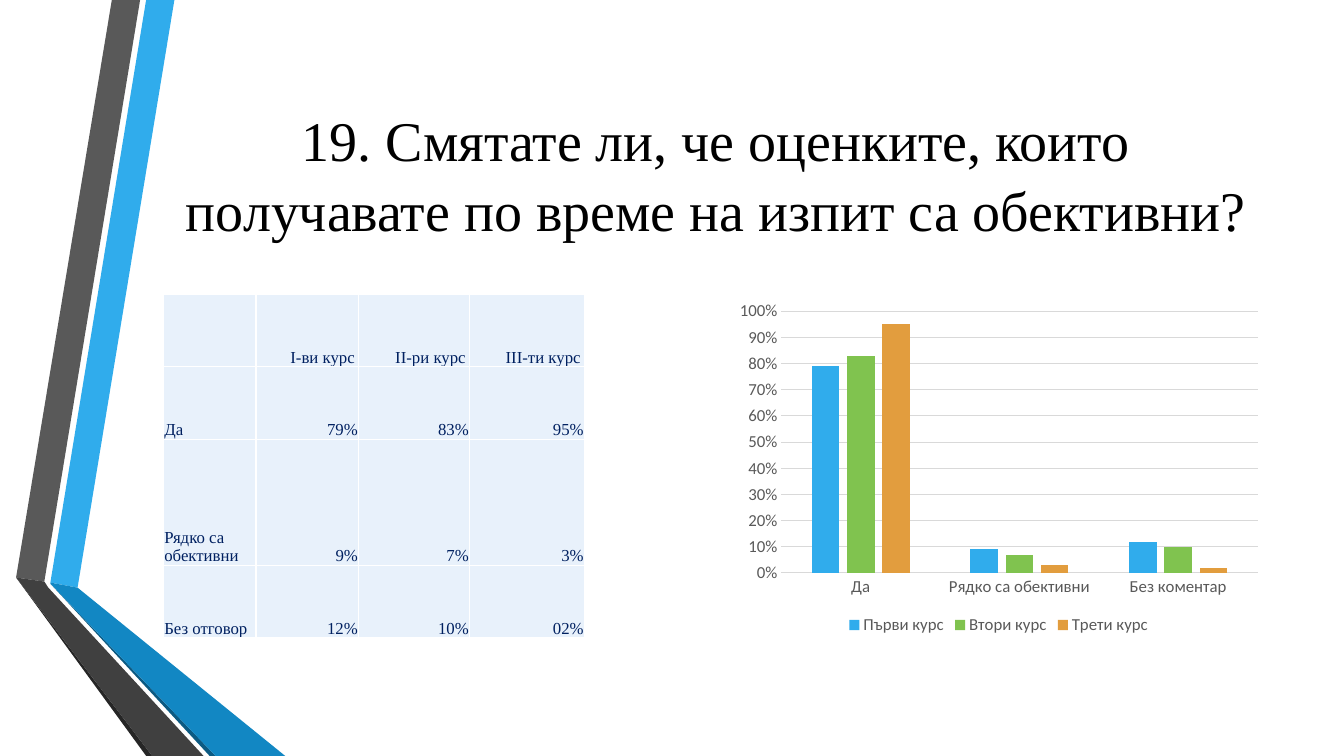
from lxml.etree import SubElement
from pptx import Presentation
from pptx.chart.data import CategoryChartData
from pptx.dml.color import RGBColor
from pptx.enum.chart import XL_CHART_TYPE as ChartType
from pptx.enum.chart import XL_LEGEND_POSITION as LegendPosition
from pptx.enum.chart import XL_TICK_MARK as TickMark
from pptx.enum.text import MSO_ANCHOR as Anchor
from pptx.enum.text import PP_ALIGN as Align
from pptx.oxml.ns import qn
from pptx.util import Inches, Pt

RIBBONS = [
    ("30ACEC", [(0.5, 5.78), (0.77, 5.83), (1.73, 0), (1.45, 0)]),
    ("595959", [(1.39, 0), (1.11, 0), (0.16, 5.73), (0.44, 5.77)]),
    ("262626", [(0.16, 5.73), (1.45, 7.5), (1.51, 7.5)]),
    ("0C5A82", [(0.5, 5.79), (2.08, 7.5), (2.14, 7.5)]),
    ("1287C3", [(0.5, 5.79), (2.14, 7.5), (2.83, 7.5), (0.77, 5.83), (0.5, 5.78)]),
    ("404040", [(2.02, 7.5), (0.48, 5.83), (0.44, 5.77), (0.16, 5.73), (1.51, 7.5)]),
]
TITLE = "19. Смятате ли, че оценките, които получавате по време на изпит са обективни?"
ANSWERS = [
    ["", "I-ви курс", "II-ри курс", "III-ти курс"],
    ["Да", "79%", "83%", "95%"],
    ["Рядко са обективни", "9%", "7%", "3%"],
    ["Без отговор", "12%", "10%", "02%"],
]
CATEGORIES = ["Да", "Рядко са обективни", "Без коментар"]
SERIES = [
    ("Първи курс", [0.79, 0.09, 0.12], "30ACEC"),
    ("Втори курс", [0.83, 0.07, 0.1], "80C34F"),
    ("Трети курс", [0.95, 0.03, 0.02], "E29D3E"),
]


def color(value):
    return RGBColor.from_string(value)


class SurveySlide:
    """Holds the style and the current slide, and draws each kind of element."""

    serif = "Times New Roman"
    sans = "Calibri"
    black = "000000"
    navy = "002060"
    gray = "595959"
    grid = "D9D9D9"
    cell_fill = "E8F1FB"
    border = "FFFFFF"

    def __init__(self, presentation):
        self.slide = presentation.slides.add_slide(presentation.slide_layouts[5])

    def style_font(self, font, name, size, value):
        font.name = name
        font.size = Pt(size)
        font.color.rgb = color(value)

    def add_run(self, paragraph, text, size, value):
        run = paragraph.add_run()
        run.text = text
        self.style_font(run.font, self.serif, size, value)

    def ribbon(self, value, points):
        start, *others = [(Inches(x), Inches(y)) for x, y in points]
        builder = self.slide.shapes.build_freeform(*start)
        builder.add_line_segments(others, close=True)
        shape = builder.convert_to_shape()
        shape.shadow.inherit = False
        shape.fill.solid()
        shape.fill.fore_color.rgb = color(value)
        shape.line.fill.background()

    def title(self, text, left, top, width, height):
        shape = self.slide.shapes.title
        shape.left, shape.top = Inches(left), Inches(top)
        shape.width, shape.height = Inches(width), Inches(height)
        frame = shape.text_frame
        frame.word_wrap = True
        frame.vertical_anchor = Anchor.MIDDLE
        paragraph = frame.paragraphs[0]
        paragraph.alignment = Align.CENTER
        paragraph.line_spacing = 1.05
        self.add_run(paragraph, text, 40, self.black)

    def cell_borders(self, cell):
        properties = cell._tc.get_or_add_tcPr()
        for position, side in enumerate(("a:lnL", "a:lnR", "a:lnT", "a:lnB")):
            line = SubElement(properties, qn(side), w=str(Pt(1)))
            fill = SubElement(line, qn("a:solidFill"))
            SubElement(fill, qn("a:srgbClr"), val=self.border)
            properties.insert(position, line)

    def table(self, rows, left, top, widths, heights):
        frame = self.slide.shapes.add_table(
            len(rows), len(widths), Inches(left), Inches(top),
            Inches(sum(widths)), Inches(sum(heights)))
        table = frame.table
        for column, width in zip(table.columns, widths):
            column.width = Inches(width)
        for row, height in zip(table.rows, heights):
            row.height = Inches(height)
        for r, texts in enumerate(rows):
            for c, text in enumerate(texts):
                cell = table.cell(r, c)
                cell.fill.solid()
                cell.fill.fore_color.rgb = color(self.cell_fill)
                cell.vertical_anchor = Anchor.BOTTOM
                cell.margin_left = cell.margin_top = Inches(0.01)
                cell.margin_right = Inches(0.01 if r else 0.04)
                cell.margin_bottom = 0
                self.cell_borders(cell)
                if text:
                    paragraph = cell.text_frame.paragraphs[0]
                    paragraph.alignment = Align.RIGHT if c else Align.LEFT
                    self.add_run(paragraph, text, 12, self.navy)

    def style_axis(self, axis):
        axis.major_tick_mark = axis.minor_tick_mark = TickMark.NONE
        self.style_font(axis.tick_labels.font, self.sans, 12, self.gray)

    def style_line(self, line):
        line.color.rgb = color(self.grid)
        line.width = Pt(0.75)

    def column_chart(self, categories, series, left, top, width, height):
        data = CategoryChartData(number_format="0%")
        data.categories = categories
        for name, values, _ in series:
            data.add_series(name, values)
        chart = self.slide.shapes.add_chart(
            ChartType.COLUMN_CLUSTERED, Inches(left), Inches(top),
            Inches(width), Inches(height), data).chart
        self.style_font(chart.font, self.sans, 10, self.black)
        chart.has_title = False
        chart.has_legend = True
        chart.legend.position = LegendPosition.BOTTOM
        chart.legend.include_in_layout = False
        self.style_font(chart.legend.font, self.sans, 12, self.gray)

        plot = chart.plots[0]
        plot.vary_by_categories = False
        plot.gap_width = 219
        plot.overlap = -27
        for bars, (_, _, value) in zip(plot.series, series):
            bars.format.fill.solid()
            bars.format.fill.fore_color.rgb = color(value)

        self.style_axis(chart.category_axis)
        self.style_line(chart.category_axis.format.line)
        axis = chart.value_axis
        self.style_axis(axis)
        axis.minimum_scale, axis.maximum_scale, axis.major_unit = 0, 1, 0.1
        axis.tick_labels.number_format = "0%"
        axis.tick_labels.number_format_is_linked = False
        axis.format.line.fill.background()
        axis.has_major_gridlines = True
        self.style_line(axis.major_gridlines.format.line)


def main():
    presentation = Presentation()
    presentation.slide_width = Inches(13.33)
    presentation.slide_height = Inches(7.5)
    survey = SurveySlide(presentation)
    for value, points in RIBBONS:
        survey.ribbon(value, points)
    survey.title(TITLE, 1.62, 0.75, 10.96, 1.92)
    survey.table(ANSWERS, 1.62, 2.92, [0.92, 1.02, 1.1, 1.14], [0.72, 0.72, 1.25, 0.72])
    survey.column_chart(CATEGORIES, SERIES, 7.23, 2.92, 5.35, 3.42)
    presentation.save("out.pptx")


if __name__ == "__main__":
    main()
